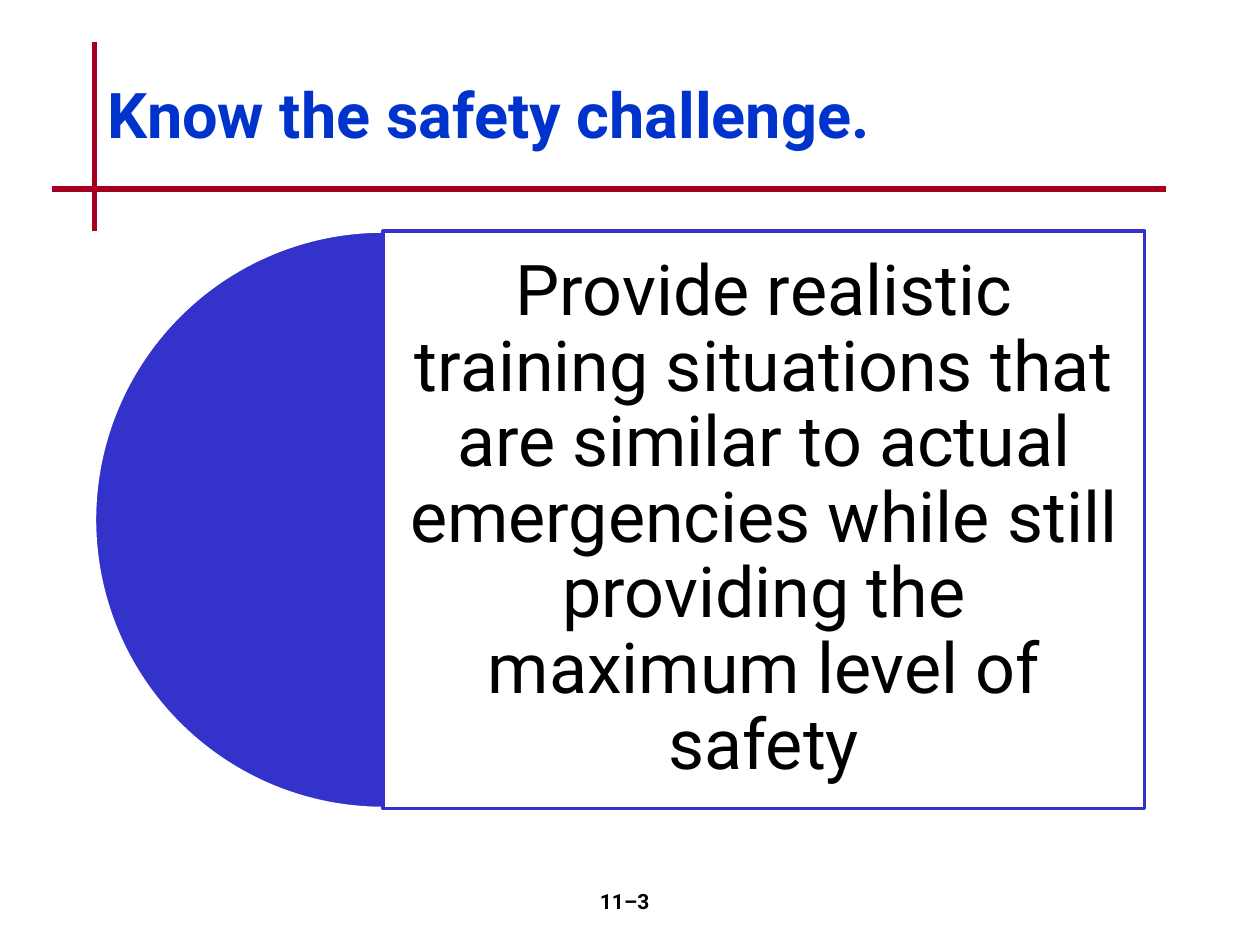
from lxml import etree
from pptx import Presentation
from pptx.dml.color import RGBColor
from pptx.enum.shapes import MSO_CONNECTOR, MSO_SHAPE
from pptx.enum.text import MSO_ANCHOR, MSO_AUTO_SIZE, PP_ALIGN
from pptx.oxml.ns import qn
from pptx.util import Pt

LINE = MSO_CONNECTOR.STRAIGHT
PIE, RECT = MSO_SHAPE.PIE, MSO_SHAPE.RECTANGLE
MID, TOP = MSO_ANCHOR.MIDDLE, MSO_ANCHOR.TOP
LEFT, MIDST = PP_ALIGN.LEFT, PP_ALIGN.CENTER
FIXED = MSO_AUTO_SIZE.NONE
PX = 914400 // 120
FONT = "Roboto"
HUES = {"rule": "A50021", "blue": "3333CC", "title": "0033CC",
        "white": "FFFFFF", "black": "000000"}


def emu(*nums):
    return [n * PX for n in nums]


def hue(name):
    return RGBColor.from_string(HUES[name])


def write(shape, text, size, tint, align, anchor, bold=False, space=1.0):
    frame = shape.text_frame
    frame.auto_size = FIXED
    frame.word_wrap = True
    frame.vertical_anchor = anchor
    para = frame.paragraphs[0]
    para.alignment = align
    para.line_spacing = space
    run = para.add_run()
    run.text = text
    font = run.font
    font.name, font.size, font.bold = FONT, Pt(size), bold
    font.color.rgb = hue(tint)


def add_rule(slide, *ends):
    rule = slide.shapes.add_connector(LINE, *emu(*ends))
    rule.line.color.rgb = hue("rule")
    rule.line.width = Pt(3)
    etree.SubElement(rule._element.spPr, qn("a:effectLst"))


def add_form(slide, kind, box, fill, edge):
    form = slide.shapes.add_shape(kind, *emu(*box))
    form.shadow.inherit = False
    form.fill.solid()
    form.fill.fore_color.rgb = hue(fill)
    form.line.color.rgb = hue(edge)
    form.line.width = Pt(2)
    return form


def add_half(slide, box):
    half = add_form(slide, PIE, box, "blue", "white")
    half.adjustments[0] = 54
    half.adjustments[1] = 162


def add_panel(slide, box, text):
    panel = add_form(slide, RECT, box, "white", "blue")
    tint = panel._element.spPr.find(qn("a:solidFill"))[0]
    etree.SubElement(tint, qn("a:alpha"), val="90000")
    frame = panel.text_frame
    frame.margin_left = frame.margin_right = 20 * PX
    frame.margin_top = frame.margin_bottom = 20 * PX
    write(panel, text, 40, "black", MIDST, MID, space=0.9)


def add_title(slide, box, text):
    title = slide.shapes.title
    title.left, title.top, title.width, title.height = emu(*box)
    write(title, text, 36, "title", LEFT, MID, bold=True, space=0.8)


def add_page(slide, box, text):
    page = slide.shapes.add_textbox(*emu(*box))
    write(page, text, 12, "black", MIDST, TOP, bold=True)


def main():
    deck = Presentation()
    deck.slide_width, deck.slide_height = emu(1200, 900)
    slide = deck.slides.add_slide(deck.slide_layouts[5])
    add_rule(slide, 90, 40, 90, 220)
    add_rule(slide, 50, 180, 1110, 180)
    add_half(slide, (90, 220, 550, 550))
    add_panel(slide, (365, 220, 725, 550),
              "Provide realistic training situations that are similar to "
              "actual emergencies while still providing the maximum level "
              "of safety")
    add_title(slide, (90, 40, 1020, 150), "Know the safety challenge.")
    add_page(slide, (470, 840, 250, 60), "11–3")
    deck.save("out.pptx")


if __name__ == "__main__":
    main()
